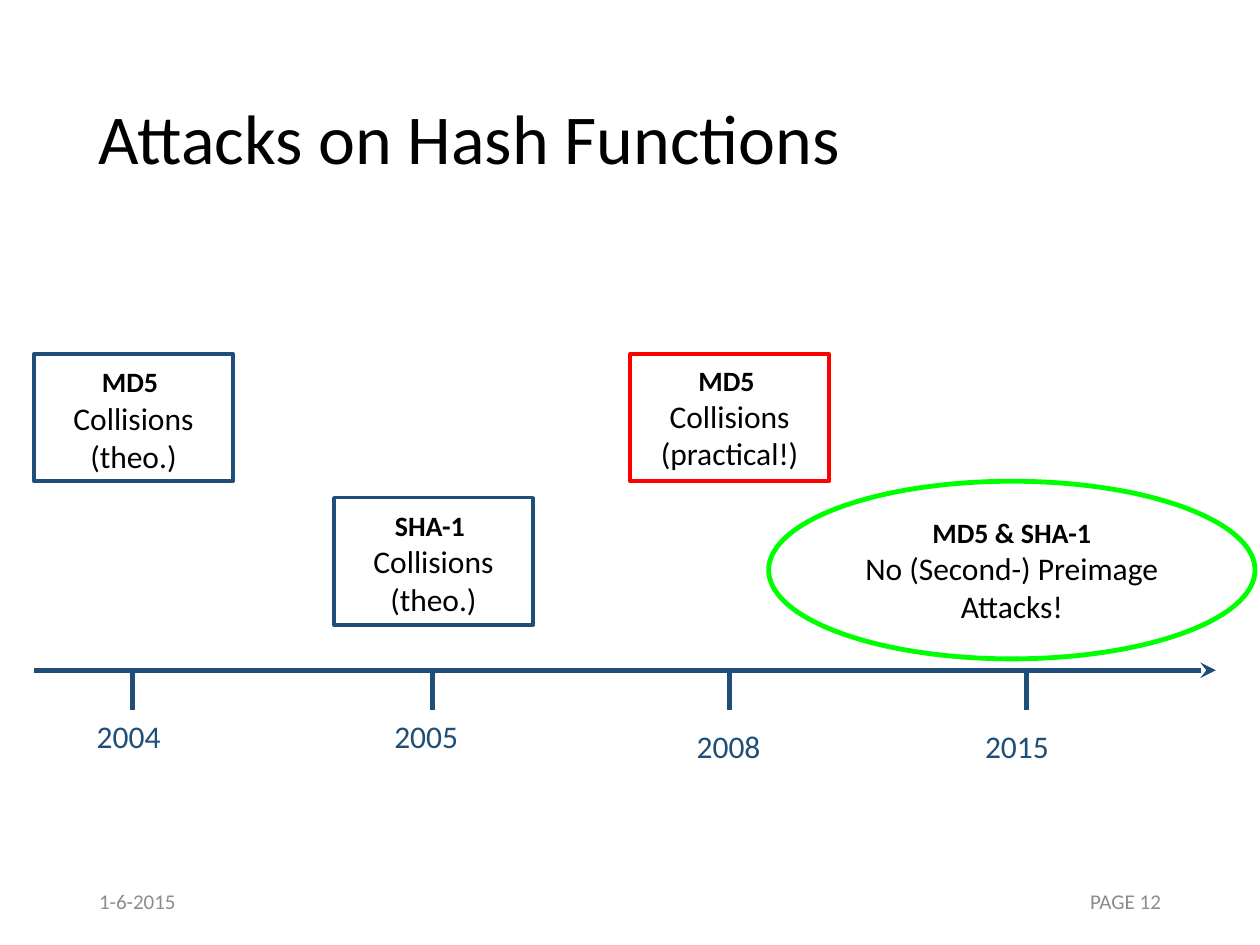
from pptx import Presentation
from pptx.dml.color import RGBColor
from pptx.enum.shapes import MSO_CONNECTOR, MSO_SHAPE as Kind
from pptx.enum.text import MSO_ANCHOR as Anchor, PP_ALIGN as Align
from pptx.oxml.ns import qn
from pptx.util import Pt
from lxml.etree import SubElement

FONT = "Calibri"
BLACK, GREY, BLUE, RED, GREEN = "000000", "8C8C8C", "1F4E79", "FF0000", "00FF00"

TITLE = "Attacks on Hash Functions"
DATE, PAGE = "1-6-2015", "PAGE 12"

# year, tick x, label left, label top
YEARS = [
    ("2004", 75.6, 48.2, 406),
    ("2005", 247, 218.2, 406),
    ("2008", 416.9, 391, 412),
    ("2015", 586.8, 555.8, 412),
]

# shape, centre x, top, width, height, line colour, line width,
# heading, size of the space after it (0 for none), further lines
EVENTS = [
    (Kind.RECTANGLE, 76.3, 202.3, 113.8, 72.7, BLUE, 2,
     "MD5", 18, ["Collisions", "(theo.)"]),
    (Kind.RECTANGLE, 247.7, 284.4, 113.8, 72.7, BLUE, 2,
     "SHA-1", 18, ["Collisions", "(theo.)"]),
    (Kind.RECTANGLE, 416.9, 202.3, 113.8, 72.7, RED, 2,
     "MD5", 16, ["Collisions", "(practical!)"]),
    (Kind.OVAL, 578.2, 275, 277.9, 101.5, GREEN, 2.75,
     "MD5 & SHA-1", 0, ["No (Second-) Preimage Attacks!"]),
]

AXIS_Y, AXIS_X1, AXIS_X2, TICK = 383, 19.4, 694.8, 23

prs = Presentation()
prs.slide_width, prs.slide_height = Pt(720), Pt(540)
slide = prs.slides.add_slide(prs.slide_layouts[6])
shapes = slide.shapes


def rgb(code):
    return RGBColor.from_string(code)


def style(font, size, color, bold=False):
    font.name, font.size, font.bold = FONT, Pt(size), bold
    font.color.rgb = rgb(color)


def label(text, x, y, w, h, size, color, align=Align.LEFT, anchor=Anchor.MIDDLE):
    frame = shapes.add_textbox(Pt(x), Pt(y), Pt(w), Pt(h)).text_frame
    frame.word_wrap = True
    frame.vertical_anchor = anchor
    para = frame.paragraphs[0]
    para.text, para.alignment = text, align
    style(para.font, size, color)
    return para


def line(x1, y1, x2, y2):
    link = shapes.add_connector(MSO_CONNECTOR.STRAIGHT, Pt(x1), Pt(y1), Pt(x2), Pt(y2))
    link.line.color.rgb = rgb(BLUE)
    link.line.width = Pt(3)
    SubElement(link._element.spPr, qn("a:effectLst"))
    return link


def event(kind, mid, top, w, h, color, weight, head, gap, rest):
    box = shapes.add_shape(kind, Pt(mid - w / 2), Pt(top), Pt(w), Pt(h))
    box.shadow.inherit = False
    box.fill.background()
    box.line.color.rgb = rgb(color)
    box.line.width = Pt(weight)
    frame = box.text_frame
    frame.word_wrap = True
    frame.vertical_anchor = Anchor.MIDDLE
    para = frame.paragraphs[0]
    para.alignment = Align.CENTER
    run = para.add_run()
    run.text = head
    style(run.font, 16, BLACK, True)
    if gap:
        run = para.add_run()
        run.text = " "
        style(run.font, gap, BLACK)
    for text in rest:
        para = frame.add_paragraph()
        para.text, para.alignment = text, Align.CENTER
        style(para.font, 18, BLACK)


label(TITLE, 49.5, 28.75, 621, 104.4, 40, BLACK).line_spacing = 0.9
label(DATE, 49.5, 500.5, 162, 28.75, 12, GREY)
label(PAGE, 508.5, 500.5, 162, 28.75, 12, GREY, Align.RIGHT)

axis = line(AXIS_X1, AXIS_Y, AXIS_X2, AXIS_Y)
SubElement(axis.line._get_or_add_ln(), qn("a:tailEnd"), type="stealth")

for year, x, left, top in YEARS:
    line(x, AXIS_Y, x, AXIS_Y + TICK)
    label(year, left, top, 65.5, 29, 18, BLUE, anchor=Anchor.TOP)

for item in EVENTS:
    event(*item)

prs.save("out.pptx")
